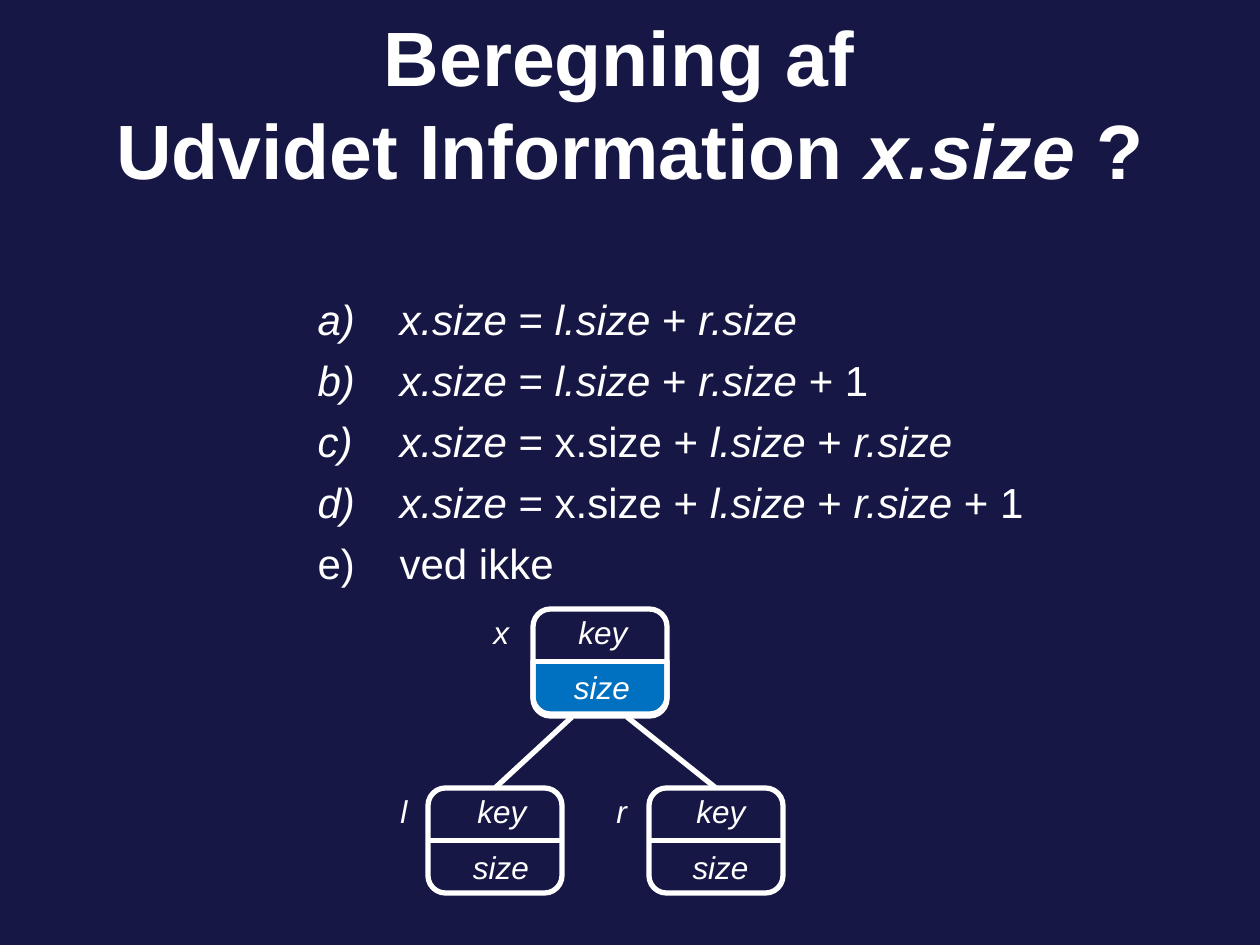
import dataclasses
import typing

import lxml.etree
import pptx
import pptx.dml.color
import pptx.enum.shapes
import pptx.enum.text
import pptx.oxml.ns
import pptx.util

SCALE = 914400 / 126
NAVY, BLUE, WHITE = "171745", "0070C0", "FFFFFF"
WIDE, HIGH = 134, 105
KIND = pptx.enum.shapes.MSO_SHAPE
ALIGN = pptx.enum.text.PP_ALIGN


@dataclasses.dataclass
class Node:
    name: str
    left: int
    top: int
    start: int
    width: int
    tab: int


ROOT = Node("x", 533, 609, 481, 242, 85)
KIDS = {
    572: Node("l", 428, 788, 388, 226, 77),
    627: Node("r", 649, 788, 604, 233, 80),
}

TITLE = [("Beregning af \vUdvidet Information ", False), ("x.size ", True), ("?", False)]
LEAD, LEFT, RIGHT, PLUS = ("x.size", True), ("l.size", True), ("r.size", True), (" + ", False)
SUM = [LEFT, PLUS, RIGHT]
EQUAL, AGAIN, ONE = (" = ", False), (" = x.size + ", False), (" + 1", False)
CHOICES = [
    [LEAD, EQUAL, *SUM],
    [LEAD, EQUAL, *SUM, ONE],
    [LEAD, AGAIN, *SUM],
    [LEAD, AGAIN, *SUM, ONE],
    [("ved ikke", False)],
]


def px(size: float) -> int:
    return round(size * SCALE)


def tint(code: str) -> pptx.dml.color.RGBColor:
    return pptx.dml.color.RGBColor.from_string(code)


def assign(item: typing.Any, values: dict) -> None:
    for name, value in values.items():
        setattr(item, name, value)


def place(item: typing.Any, left: int, top: int, width: int, height: int) -> None:
    assign(item, {"left": px(left), "top": px(top), "width": px(width), "height": px(height)})


def child(parent: typing.Any, tag: str) -> typing.Any:
    return lxml.etree.SubElement(parent, pptx.oxml.ns.qn(tag))


def write(para: typing.Any, parts: list, size: int, bold: bool = False) -> None:
    for text, slant in parts:
        for count, piece in enumerate(text.split("\v")):
            if count:
                para.add_line_break()
            run = para.add_run()
            run.text = piece
            look = {"name": "Arial", "size": pptx.util.Pt(size), "bold": bold, "italic": slant}
            assign(run.font, look)
            run.font.color.rgb = tint(WHITE)


def stroke(line: typing.Any) -> None:
    line.color.rgb = tint(WHITE)
    line.width = pptx.util.Pt(3)


def block(slide: typing.Any, kind: int, area: tuple, fill: str = "", edge: bool = True) -> typing.Any:
    shape = slide.shapes.add_shape(kind, *map(px, area))
    shape.shadow.inherit = False
    if fill:
        shape.fill.solid()
        shape.fill.fore_color.rgb = tint(fill)
    else:
        shape.fill.background()
    if edge:
        stroke(shape.line)
    else:
        shape.line.fill.background()
    return shape


def link(slide: typing.Any, *ends: int) -> typing.Any:
    kind = pptx.enum.shapes.MSO_CONNECTOR.STRAIGHT
    line = slide.shapes.add_connector(kind, *map(px, ends))
    stroke(line.line)
    child(line._element.spPr, "a:effectLst")
    return line


def draw(slide: typing.Any, node: Node) -> typing.Any:
    box = block(slide, KIND.ROUNDED_RECTANGLE, (node.left, node.top, WIDE, HIGH))
    mid = node.top + HIGH // 2
    rule = link(slide, node.left, mid, node.left + WIDE, mid)
    rule.begin_connect(box, 1)
    rule.end_connect(box, 3)
    label = slide.shapes.add_textbox(*map(px, (node.start, node.top - 2, node.width, 108)))
    frame = label.text_frame
    frame.word_wrap = True
    first, last = frame.paragraphs[0], frame.add_paragraph()
    write(first, [(f"{node.name}\tkey", True)], 18)
    stop = child(child(first._p.get_or_add_pPr(), "a:tabLst"), "a:tab")
    stop.set("pos", str(px(node.tab)))
    stop.set("algn", "l")
    assign(last, {"alignment": ALIGN.CENTER, "space_before": pptx.util.Pt(10)})
    write(last, [("size", True)], 18)
    return box


def head(shape: typing.Any) -> None:
    place(shape, 0, 23, 1260, 158)
    frame = shape.text_frame
    none = pptx.enum.text.MSO_AUTO_SIZE.NONE
    middle = pptx.enum.text.MSO_ANCHOR.MIDDLE
    assign(frame, {"auto_size": none, "vertical_anchor": middle, "word_wrap": True})
    para = frame.paragraphs[0]
    assign(para, {"alignment": ALIGN.CENTER, "line_spacing": pptx.util.Pt(53)})
    write(para, TITLE, 44, True)


def body(shape: typing.Any) -> None:
    place(shape, 305, 287, 746, 312)
    frame = shape.text_frame
    assign(frame, {"auto_size": pptx.enum.text.MSO_AUTO_SIZE.NONE, "word_wrap": True})
    for count, parts in enumerate(CHOICES):
        para = frame.add_paragraph() if count else frame.paragraphs[0]
        para.space_before = pptx.util.Pt(6 if count else 0)
        props = para._p.get_or_add_pPr()
        props.set("marL", str(px(82)))
        props.set("indent", str(px(-82)))
        child(props, "a:buAutoNum").set("type", "alphaLcParenR")
        write(para, parts, 24)


def main() -> None:
    deck = pptx.Presentation()
    assign(deck, {"slide_width": px(1260), "slide_height": px(945)})
    slide = deck.slides.add_slide(deck.slide_layouts[1])
    slide.background.fill.solid()
    slide.background.fill.fore_color.rgb = tint(NAVY)
    head(slide.shapes.title)
    body(slide.placeholders[1])
    block(slide, KIND.ROUNDED_RECTANGLE, (ROOT.left, ROOT.top + 2, WIDE, HIGH), BLUE)
    block(slide, KIND.RECTANGLE, (504, 593, 368, 67), NAVY, False)
    draw(slide, ROOT)
    for start, node in KIDS.items():
        box = draw(slide, node)
        edge = link(slide, start, 717, node.left + WIDE // 2, node.top)
        edge.end_connect(box, 0)
    deck.save("out.pptx")


if __name__ == "__main__":
    main()
